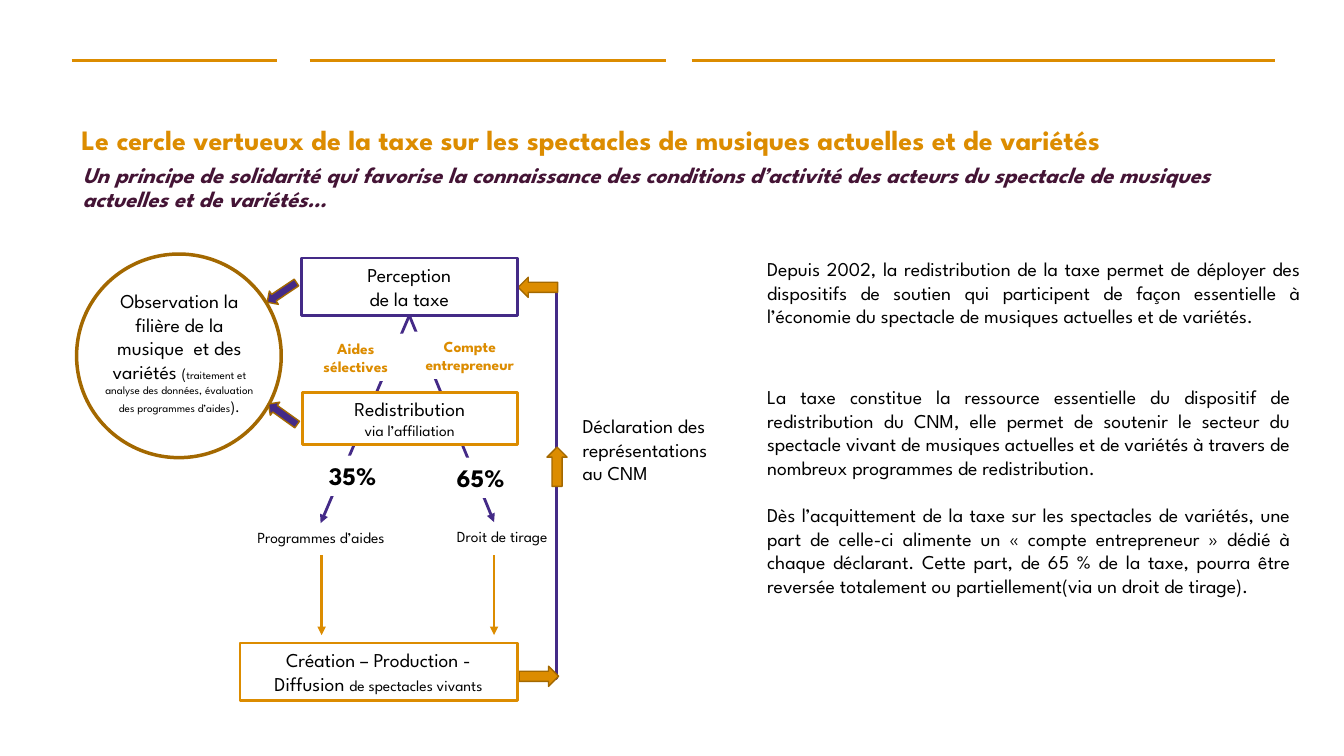
"""Build the slide on the virtuous circle of the live music tax."""
from dataclasses import dataclass
from typing import Optional

from lxml.etree import SubElement
from pptx import Presentation
from pptx.dml.color import RGBColor
from pptx.enum.shapes import MSO_CONNECTOR, MSO_SHAPE
from pptx.enum.text import MSO_ANCHOR, PP_ALIGN
from pptx.oxml.ns import qn
from pptx.shapes.autoshape import Shape
from pptx.slide import Slide
from pptx.util import Inches, Pt

FONT = "League Spartan"
ORANGE, BROWN, VIOLET, PLUM = "DC8C00", "A36800", "442A87", "441435"
BLACK, WHITE = "000000", "FFFFFF"
LEFT, CENTER, RIGHT, JUSTIFY = (
    PP_ALIGN.LEFT, PP_ALIGN.CENTER, PP_ALIGN.RIGHT, PP_ALIGN.JUSTIFY)


@dataclass(frozen=True)
class Line:
    start: tuple[float, float]
    end: tuple[float, float]
    color: str
    width: float = 2
    arrow: bool = True


@dataclass(frozen=True)
class Outline:
    kind: MSO_SHAPE
    place: tuple[float, float, float, float]
    line: Optional[str] = None
    width: float = 2
    fill: Optional[str] = None
    rotation: float = 0


@dataclass(frozen=True)
class Text:
    place: tuple[float, float, float, float]
    paragraphs: list[list[tuple[str, float]]]
    align: PP_ALIGN = LEFT
    color: str = BLACK
    bold: bool = False
    italic: bool = False
    line: Optional[str] = None
    fill: Optional[str] = None
    middle: bool = False
    spacing: float = 1
    gap: float = 0


def rule(left: float, right: float) -> Line:
    return Line((left, 0.6), (right, 0.6), ORANGE, 1.5, False)


def block_arrow(left: float, top: float, rotation: float, fill: str = ORANGE,
                width: float = 0.39, height: float = 0.2) -> Outline:
    return Outline(MSO_SHAPE.RIGHT_ARROW, (left, top, width, height), BROWN, 1, fill, rotation)


def step(place: tuple[float, float, float, float], line: str,
         paragraphs: list[list[tuple[str, float]]], fill: Optional[str] = None) -> Text:
    return Text(place, paragraphs, CENTER, line=line, fill=fill, middle=True)


def label(left: float, top: float, width: float, height: float, text: str, size: float,
          align: PP_ALIGN, color: str = BLACK) -> Text:
    return Text((left, top, width, height), [[(text, size)]], align, color, True,
                fill=WHITE, middle=True)


LINES = [
    rule(0.71, 2.75), rule(3.07, 6.61), rule(6.86, 12.65),
    Line((4.06, 3.13), (4.9, 5.18), VIOLET),
    Line((4.06, 3.13), (3.18, 5.19), VIOLET),
    Line((3.19, 5.51), (3.19, 6.3), ORANGE),
    Line((4.9, 5.51), (4.9, 6.3), ORANGE),
]

OUTLINES = [
    Outline(MSO_SHAPE.RIGHT_BRACKET, (5.16, 2.84, 0.36, 3.89), VIOLET),
    Outline(MSO_SHAPE.OVAL, (0.76, 2.52, 2.03, 2.02), BROWN, 2.5),
    block_arrow(5.14, 2.75, 180),
    block_arrow(5.33, 4.53, 270),
    block_arrow(5.15, 6.61, 0),
    block_arrow(2.62, 2.82, 146.1, VIOLET, 0.35, 0.16),
    block_arrow(2.63, 4.03, 215.6, VIOLET, 0.35, 0.16),
]

TEXTS = [
    Text((0.71, 1.2, 12.03, 0.4),
         [[("Le cercle vertueux de la taxe sur les spectacles de musiques actuelles "
            "et de variétés", 20)]], color=ORANGE, bold=True, spacing=0.9),
    Text((0.72, 1.58, 11.55, 0.5),
         [[("Un principe de solidarité qui favorise la connaissance des conditions "
            "d’activité des acteurs du spectacle de musiques actuelles et de variétés…", 16)]],
         color=PLUM, bold=True, italic=True, spacing=0.9),
    step((2.99, 2.56, 2.14, 0.57), VIOLET, [[("Perception", 14)], [("de la taxe", 14)]]),
    label(2.95, 3.31, 1.16, 0.47, "Aides sélectives", 11, CENTER, ORANGE),
    label(4.08, 3.29, 1.16, 0.47, "Compte entrepreneur", 11, CENTER, ORANGE),
    step((3, 3.89, 2.13, 0.52), ORANGE,
         [[("Redistribution", 14)], [("via l’affiliation", 11)]], WHITE),
    label(3.05, 4.52, 0.78, 0.4, "35%", 18, RIGHT),
    label(4.43, 4.54, 0.73, 0.4, "65%", 18, LEFT),
    Text((2.3, 5.19, 1.77, 0.29), [[("Programmes d’aides", 11)]], CENTER),
    Text((4.26, 5.18, 1.27, 0.3), [[("Droit de tirage", 11)]], RIGHT),
    step((2.38, 6.38, 2.75, 0.57), ORANGE,
         [[("Création – Production - Diffusion ", 14), ("de spectacles vivants", 11)]]),
    Text((0.89, 2.82, 1.78, 1.5),
         [[("Observation la filière de la musique  et des variétés ", 14), ("(", 11),
           ("traitement et analyse des données, évaluation des programmes d’aides", 8),
           (").", 11)]], CENTER),
    Text((5.68, 4.06, 1.56, 1.14), [[("Déclaration des représentations au CNM", 14)]]),
    Text((7.51, 2.5, 5.49, 1.04),
         [[("Depuis 2002, la redistribution de la taxe permet de déployer des dispositifs "
            "de soutien qui participent de façon essentielle à l’économie du spectacle de "
            "musiques actuelles et de variétés.", 14)]], JUSTIFY),
    Text((7.51, 3.77, 5.39, 3.7),
         [[("La taxe constitue la ressource essentielle du dispositif de redistribution du "
            "CNM, elle permet de soutenir le secteur du spectacle vivant de musiques "
            "actuelles et de variétés à travers de nombreux programmes de "
            "redistribution.", 14)],
          [("Dès l’acquittement de la taxe sur les spectacles de variétés, une part de "
            "celle-ci alimente un « compte entrepreneur » dédié à chaque déclarant. Cette "
            "part, de 65 % de la taxe, pourra être reversée totalement ou "
            "partiellement(via un droit de tirage).", 14)]], JUSTIFY, gap=17),
]


def rgb(color: str) -> RGBColor:
    return RGBColor.from_string(color)


def draw_line(slide: Slide, line: Line) -> None:
    connector = slide.shapes.add_connector(
        MSO_CONNECTOR.STRAIGHT, *map(Inches, line.start + line.end))
    connector.line.color.rgb = rgb(line.color)
    connector.line.width = Pt(line.width)
    if line.arrow:
        SubElement(connector.line._get_or_add_ln(), qn("a:tailEnd"), type="triangle")
    SubElement(connector._element.spPr, qn("a:effectLst"))


def draw_outline(slide: Slide, outline: Outline) -> Shape:
    shape = slide.shapes.add_shape(outline.kind, *map(Inches, outline.place))
    shape.shadow.inherit = False
    shape.rotation = outline.rotation
    if outline.kind == MSO_SHAPE.RIGHT_BRACKET:
        shape.adjustments[0] = 0
    if outline.fill:
        shape.fill.solid()
        shape.fill.fore_color.rgb = rgb(outline.fill)
    else:
        shape.fill.background()
    if outline.line:
        shape.line.color.rgb = rgb(outline.line)
        shape.line.width = Pt(outline.width)
    else:
        shape.line.fill.background()
    return shape


def draw_text(slide: Slide, text: Text) -> None:
    if text.line or text.fill:
        shape = draw_outline(slide, Outline(
            MSO_SHAPE.RECTANGLE, text.place, text.line, fill=text.fill))
    else:
        shape = slide.shapes.add_textbox(*map(Inches, text.place))
    frame = shape.text_frame
    frame.word_wrap = True
    frame.vertical_anchor = MSO_ANCHOR.MIDDLE if text.middle else MSO_ANCHOR.TOP
    for index, pieces in enumerate(text.paragraphs):
        paragraph = frame.add_paragraph() if index else frame.paragraphs[0]
        paragraph.alignment = text.align
        paragraph.line_spacing = text.spacing
        if index and text.gap:
            paragraph.space_before = Pt(text.gap)
        for wording, size in pieces:
            run = paragraph.add_run()
            run.text = wording
            run.font.name = FONT
            run.font.size = Pt(size)
            run.font.bold = text.bold
            run.font.italic = text.italic
            run.font.color.rgb = rgb(text.color)


def main() -> None:
    presentation = Presentation()
    presentation.slide_width = Inches(13.33)
    presentation.slide_height = Inches(7.5)
    slide = presentation.slides.add_slide(presentation.slide_layouts[6])
    for line in LINES:
        draw_line(slide, line)
    for outline in OUTLINES:
        draw_outline(slide, outline)
    for text in TEXTS:
        draw_text(slide, text)
    presentation.save("out.pptx")


if __name__ == "__main__":
    main()
